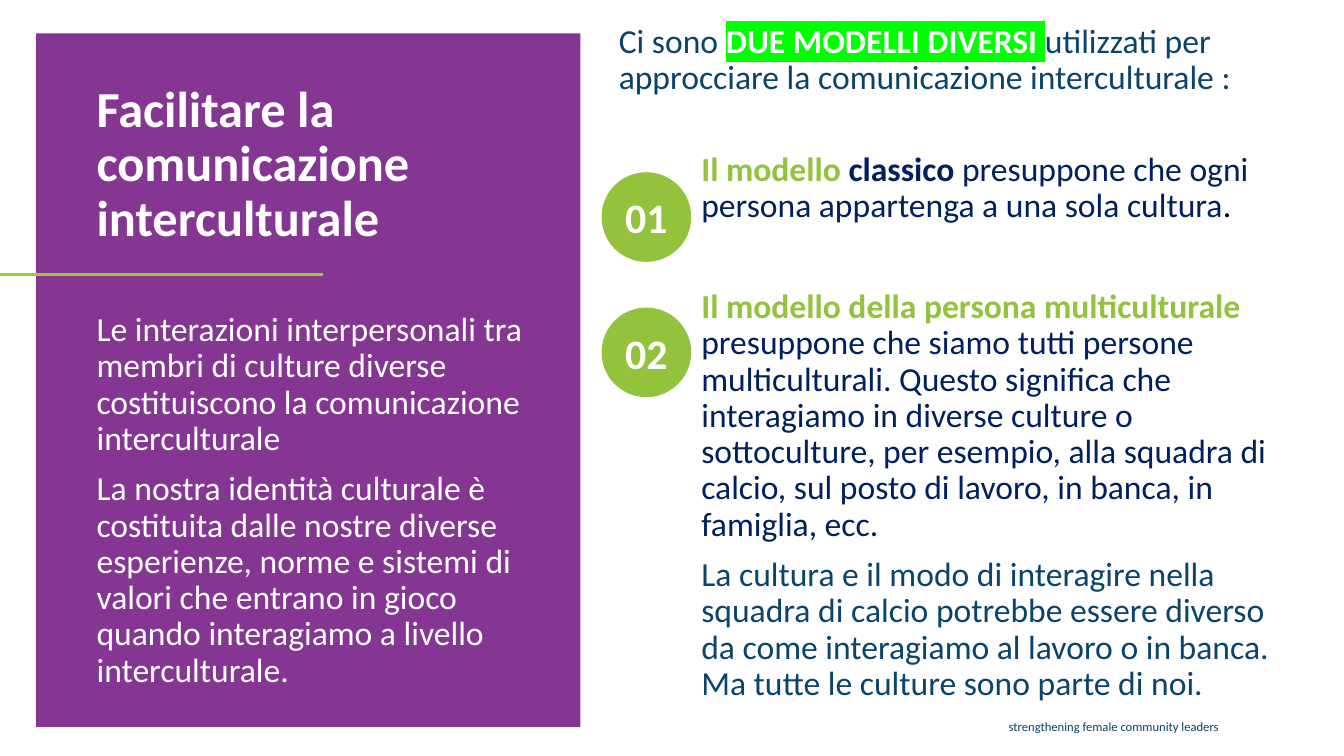
from dataclasses import dataclass

import pptx
import pptx.dml.color
import pptx.enum.shapes
import pptx.enum.text
import pptx.oxml.ns
import pptx.util
from lxml import etree

Cm = pptx.util.Cm
Pt = pptx.util.Pt
qn = pptx.oxml.ns.qn

WHITE = "FFFFFF"
PURPLE = "853693"
GREEN = "93C23D"
LINE_GREEN = "99CB38"
TEAL = "09446A"
NAVY = "002060"
MODEL_INDENT = 2.08


@dataclass
class Frame:
    left: float
    top: float
    width: float
    height: float

    def lengths(self) -> list:
        return [Cm(side) for side in (self.left, self.top, self.width, self.height)]


@dataclass
class Span:
    text: str
    color: str | None = None
    bold: bool | None = None
    highlight: str | None = None


@dataclass
class Para:
    spans: list[Span]
    size: float = 24
    color: str = WHITE
    bold: bool = False
    before: float = 0
    spacing: float = 0.9
    indent: float = 0
    align: str = "LEFT"


@dataclass
class Badge:
    text: str
    top: float


def rgb(color: str):
    return pptx.dml.color.RGBColor.from_string(color)


def write(box, paras: list[Para], anchor: str = "TOP") -> None:
    text_frame = box.text_frame
    text_frame.word_wrap = True
    text_frame.auto_size = pptx.enum.text.MSO_AUTO_SIZE.NONE
    text_frame.vertical_anchor = getattr(pptx.enum.text.MSO_ANCHOR, anchor)
    for index, para in enumerate(paras):
        paragraph = text_frame.paragraphs[0] if index == 0 else text_frame.add_paragraph()
        paragraph.alignment = getattr(pptx.enum.text.PP_ALIGN, para.align)
        paragraph.line_spacing = para.spacing
        paragraph.space_before = Pt(para.before)
        properties = paragraph._p.get_or_add_pPr()
        properties.set("marL", str(int(Cm(para.indent))))
        properties.set("indent", "0")
        etree.SubElement(properties, qn("a:buNone"))
        paragraph.font.name = "Calibri"
        paragraph.font.size = Pt(para.size)
        paragraph.font.bold = para.bold
        paragraph.font.color.rgb = rgb(para.color)
        for span in para.spans:
            run = paragraph.add_run()
            run.text = span.text
            if span.bold is not None:
                run.font.bold = span.bold
            if span.color:
                run.font.color.rgb = rgb(span.color)
            if span.highlight:
                mark = etree.SubElement(run._r.get_or_add_rPr(), qn("a:highlight"))
                etree.SubElement(mark, qn("a:srgbClr")).set("val", span.highlight)


def fill_placeholder(box, frame: Frame, paras: list[Para]) -> None:
    box.left, box.top, box.width, box.height = frame.lengths()
    write(box, paras)


def add_filled(page, kind: str, frame: Frame, color: str):
    shape = page.shapes.add_shape(
        getattr(pptx.enum.shapes.MSO_SHAPE, kind), *frame.lengths())
    shape.shadow.inherit = False
    shape.fill.solid()
    shape.fill.fore_color.rgb = rgb(color)
    shape.line.fill.background()
    return shape


def add_rule(page, start: float, end: float, height: float) -> None:
    rule = page.shapes.add_connector(
        pptx.enum.shapes.MSO_CONNECTOR.STRAIGHT, Cm(start), Cm(height), Cm(end), Cm(height))
    rule.line.color.rgb = rgb(LINE_GREEN)
    rule.line.width = Pt(2.25)
    etree.SubElement(rule._element.spPr, qn("a:effectLst"))


def add_badge(page, badge: Badge) -> None:
    circle = add_filled(page, "OVAL", Frame(15.16, badge.top, 2.26, 2.26), GREEN)
    para = Para([Span(badge.text)], size=30, bold=True, spacing=1, align="CENTER")
    write(circle, [para], "MIDDLE")


TITLE = [Para([Span("Facilitare la comunicazione interculturale")], size=36, bold=True)]

INTRODUCTION = [
    Para([Span("Le interazioni interpersonali tra membri di culture diverse "
               "costituiscono la comunicazione interculturale")]),
    Para([Span("La nostra identità culturale è costituita dalle nostre diverse esperienze, "
               "norme e sistemi di valori che entrano in gioco quando interagiamo a livello "
               "interculturale.")], before=10),
]

MODELS = [
    Para([Span("Ci sono "),
          Span("DUE MODELLI DIVERSI ", WHITE, True, "00FF00"),
          Span("utilizzati per approcciare la comunicazione interculturale :")], color=TEAL),
    Para([Span("Il modello ", GREEN, True),
          Span("classico ", bold=True),
          Span("presuppone che ogni persona appartenga a una sola cultura"),
          Span(".", "000000")], color=NAVY, before=40, indent=MODEL_INDENT),
    Para([Span("Il modello della persona multiculturale ", GREEN, True),
          Span("presuppone che siamo tutti persone multiculturali. Questo significa che "
               "interagiamo in diverse culture o sottoculture, per esempio, alla squadra di "
               "calcio, sul posto di lavoro, in banca, in famiglia, ecc.")],
         color=NAVY, before=46, indent=MODEL_INDENT),
    Para([Span("La cultura e il modo di interagire nella squadra di calcio potrebbe essere "
               "diverso da come interagiamo al lavoro o in banca. Ma tutte le culture sono "
               "parte di noi.")], color=TEAL, before=10, indent=MODEL_INDENT),
]

FOOTER = [Para([Span("strengthening female community leaders")],
               size=9, color=TEAL, spacing=1, align="RIGHT")]

BADGES = [Badge("01", 4.34), Badge("02", 7.75)]


def main() -> None:
    deck = pptx.Presentation()
    deck.slide_width, deck.slide_height = Cm(33.87), Cm(19.05)
    page = deck.slides.add_slide(deck.slide_layouts.get_by_name("Two Content"))
    title, introduction, models = page.placeholders

    panel = add_filled(page, "RECTANGLE", Frame(0.91, 0.84, 13.72, 17.48), PURPLE)
    title._element.addprevious(panel._element)

    fill_placeholder(title, Frame(2.18, 1.98, 11, 5.49), TITLE)
    fill_placeholder(models, Frame(15.34, 0.48, 17.63, 17.17), MODELS)
    fill_placeholder(introduction, Frame(2.18, 7.75, 12.04, 9.91), INTRODUCTION)
    footer = page.shapes.add_textbox(*Frame(3.53, 17.98, 27.43, 0.64).lengths())
    write(footer, FOOTER)

    add_rule(page, 8.15, 0, 6.91)
    for badge in BADGES:
        add_badge(page, badge)
    deck.save("out.pptx")


if __name__ == "__main__":
    main()
